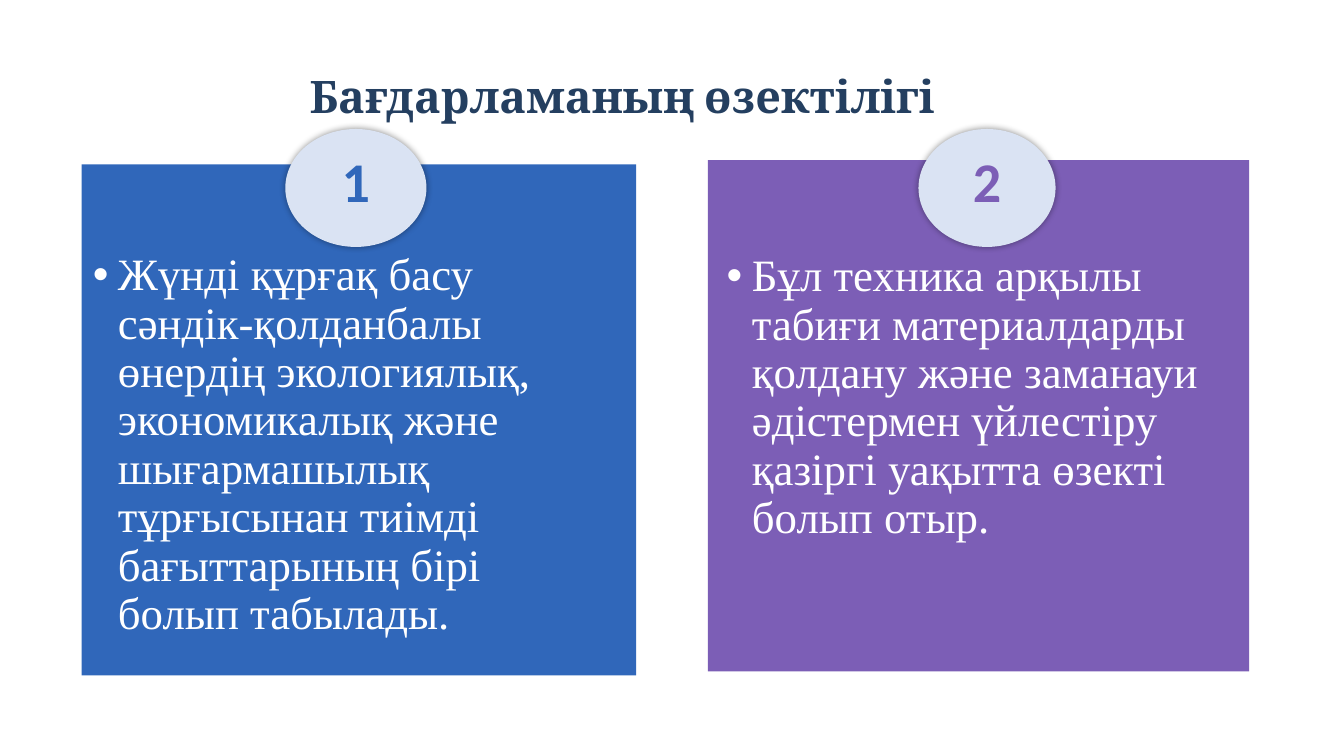
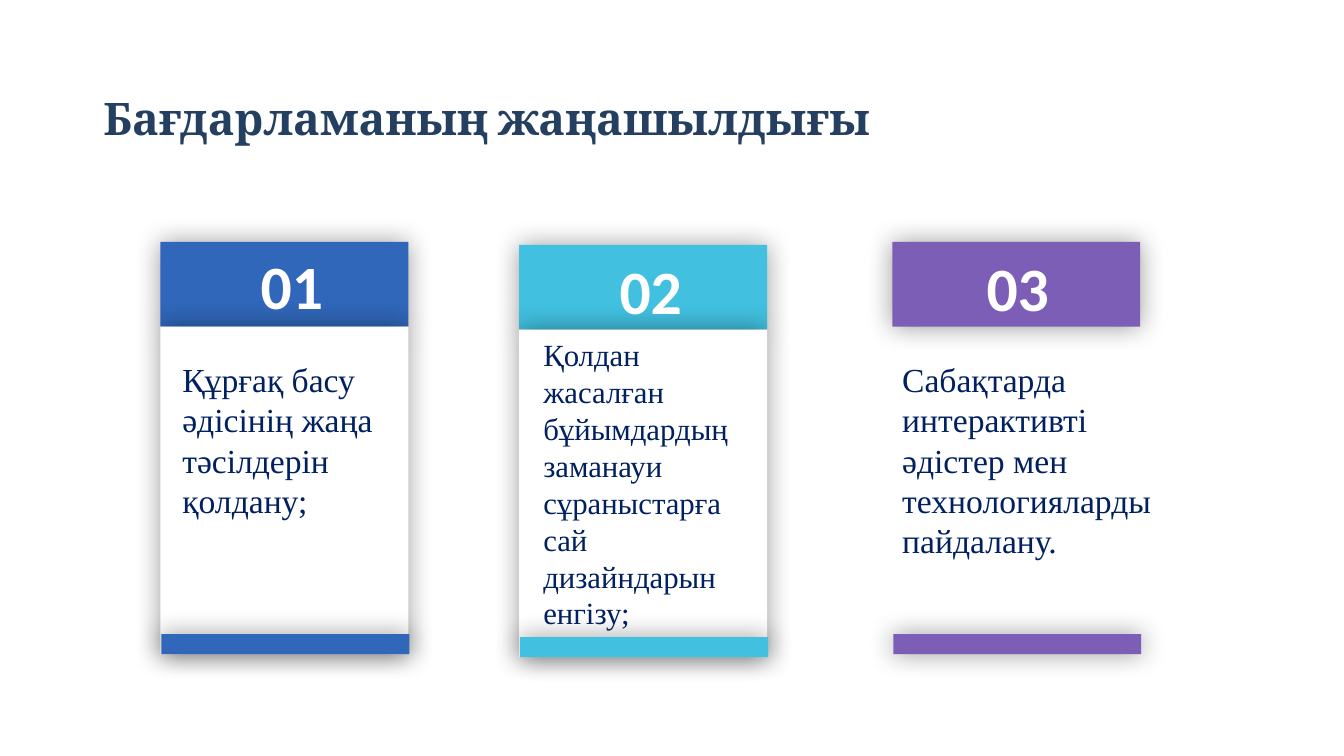
from pptx import Presentation, util as u
from pptx.dml.color import RGBColor
from pptx.enum import shapes, text
from pptx.oxml import parse_xml
from pptx.oxml.ns import nsdecls, qn

Inches = u.Inches
NAVY = RGBColor(0x24, 0x3F, 0x60)
INK = RGBColor(0x00, 0x20, 0x60)
BLUE = RGBColor(0x30, 0x67, 0xBA)
CYAN = RGBColor(0x41, 0xC0, 0xE0)
PURPLE = RGBColor(0x7C, 0x5E, 0xB6)
PALE = RGBColor(0xDA, 0xE3, 0xF3)
WHITE = RGBColor(0xFF, 0xFF, 0xFF)
RECT = shapes.MSO_SHAPE.RECTANGLE
OVAL = shapes.MSO_SHAPE.OVAL
CENTER = text.PP_ALIGN.CENTER
LEFT = text.PP_ALIGN.LEFT

SHADOW = (
    "<a:effectLst %s><a:outerShdw blurRad='{}' dist='0' dir='0' algn='ctr' rotWithShape='0'>"
    "<a:srgbClr val='000000'><a:alpha val='40000'/></a:srgbClr>"
    "</a:outerShdw></a:effectLst>" % nsdecls("a")
)
TITLE = dict(font="Cambria", size=32, color=NAVY, bold=True, line=1.15, before=2,
             anchor=text.MSO_ANCHOR.MIDDLE)
BULLET = dict(size=32, color=WHITE, line=0.9, before=10, bullet=True)
NUMBER = dict(font="Calibri", bold=True, align=CENTER)


def add_block(slide, kind, box, color, blur=0):
    """Draw a filled outline-free shape, with a soft shadow when blur (points) is given."""
    block = slide.shapes.add_shape(kind, *map(Inches, box))
    block.fill.solid()
    block.fill.fore_color.rgb = color
    block.line.fill.background()
    block.shadow.inherit = False
    if blur:
        properties = block._element.spPr
        properties.remove(properties.find(qn("a:effectLst")))
        properties.append(parse_xml(SHADOW.format(u.Pt(blur))))


def write(slide, words, box, holder=None, font="Times New Roman", size=24, color=INK,
          bold=False, align=LEFT, anchor=text.MSO_ANCHOR.TOP, line=None, before=None,
          bullet=False, wrap=True, blur=0):
    """Put formatted text in a placeholder, or in a new text box if none is given."""
    holder = holder or slide.shapes.add_textbox(0, 0, 0, 0)
    holder.left, holder.top, holder.width, holder.height = map(Inches, box)
    frame = holder.text_frame
    frame.auto_size = text.MSO_AUTO_SIZE.NONE
    frame.word_wrap = wrap
    frame.vertical_anchor = anchor
    paragraph = frame.paragraphs[0]
    paragraph.alignment = align
    if line:
        paragraph.line_spacing = line
        paragraph.space_before = u.Pt(before)
    if bullet:
        properties = paragraph._p.get_or_add_pPr()
        properties.set("marL", str(Inches(0.25)))
        properties.set("indent", str(Inches(-0.25)))
        properties.append(parse_xml("<a:buFont %s typeface='Arial'/>" % nsdecls("a")))
        properties.append(parse_xml("<a:buChar %s char='•'/>" % nsdecls("a")))
    run = paragraph.add_run()
    run.text = words
    run.font.name, run.font.size, run.font.bold = font, u.Pt(size), bold
    run.font.color.rgb = color
    if blur:
        run._r.rPr.find(qn("a:solidFill")).addnext(parse_xml(SHADOW.format(u.Pt(blur))))


deck = Presentation()
deck.slide_width, deck.slide_height = Inches(13.33), Inches(7.5)

# Relevance: two numbered panels
relevance = deck.slides.add_slide(deck.slide_layouts[1])
write(relevance, "Бағдарламаның өзектілігі", (0.42, 0.18, 11.5, 1.45),
      holder=relevance.shapes.title, align=CENTER, **TITLE)
first_reason = relevance.placeholders[1]
panels = [
    ("1", BLUE, (0.81, 1.63, 5.5, 5.07), (0.82, 2.45, 5.35, 4.25), 2.83, 1.4, first_reason,
     "Жүнді құрғақ басу сәндік-қолданбалы өнердің экологиялық, экономикалық және "
     "шығармашылық тұрғысынан тиімді бағыттарының бірі болып табылады."),
    ("2", PURPLE, (7.02, 1.59, 5.37, 5.07), (7.11, 2.46, 5.23, 4.25), 9.11, 1.36, None,
     "Бұл техника арқылы табиғи материалдарды қолдану және заманауи әдістермен "
     "үйлестіру қазіргі уақытта өзекті болып отыр."),
]
for number, color, panel, reason_box, badge_left, badge_width, holder, reason in panels:
    add_block(relevance, RECT, panel, color)
    if holder:
        relevance.shapes._spTree.append(holder._element)  # bring above its panel
    write(relevance, reason, reason_box, holder=holder, **BULLET)
    add_block(relevance, OVAL, (badge_left, 1.28, badge_width, 1.17), PALE, blur=5)
    write(relevance, number, (badge_left, 1.4, badge_width, 0.77),
          size=40, color=color, blur=4, **NUMBER)

# Novelty: three cards
novelty = deck.slides.add_slide(deck.slide_layouts[5])
write(novelty, "Бағдарламаның жаңашылдығы", (0.92, 0.4, 11.5, 1.45),
      holder=novelty.shapes.title, **TITLE)
CARD_WIDTH, HEADER_HEIGHT, SHEET_HEIGHT, FOOT_HEIGHT = 2.46, 0.84, 3.25, 0.2
cards = [
    ("01", BLUE, 1.59, 2.4, True, (2.48, 2.41), (1.71, 3.51, 2.12, 1.72), 24,
     "Құрғақ басу әдісінің жаңа тәсілдерін қолдану;"),
    ("02", CYAN, 5.15, 2.43, True, (6.04, 2.46), (5.29, 3.28, 2.34, 3.06), 22,
     "Қолдан жасалған бұйымдардың заманауи сұраныстарға сай дизайндарын енгізу;"),
    ("03", PURPLE, 8.85, 2.4, False, (9.68, 2.43), (8.85, 3.51, 2.77, 2.12), 24,
     "Сабақтарда интерактивті әдістер мен технологияларды пайдалану."),
]
for number, color, left, top, has_sheet, number_at, idea_box, size, idea in cards:
    sheet_top = top + HEADER_HEIGHT
    foot_top = sheet_top + SHEET_HEIGHT - FOOT_HEIGHT
    add_block(novelty, RECT, (left, top, CARD_WIDTH, HEADER_HEIGHT), color, blur=19)
    if has_sheet:
        add_block(novelty, RECT, (left, sheet_top, CARD_WIDTH, SHEET_HEIGHT), WHITE, blur=19)
    add_block(novelty, RECT, (left + 0.01, foot_top, CARD_WIDTH, FOOT_HEIGHT), color, blur=19)
    write(novelty, number, (*number_at, 0.83, 0.84), size=44, color=WHITE, wrap=False, **NUMBER)
    write(novelty, idea, idea_box, size=size)

deck.save("out.pptx")
